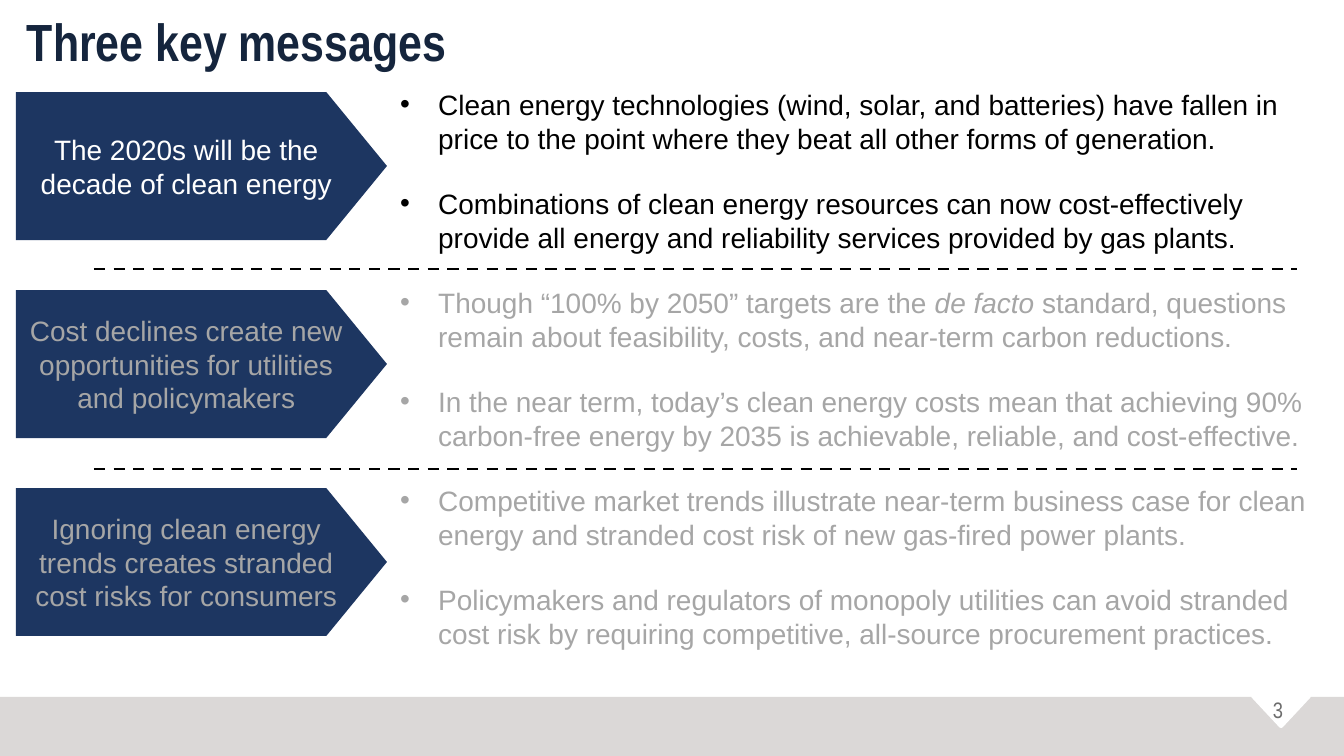
from lxml.etree import SubElement
from pptx import Presentation
from pptx.dml.color import RGBColor
from pptx.enum.dml import MSO_LINE
from pptx.enum.shapes import MSO_CONNECTOR, MSO_SHAPE
from pptx.enum.text import MSO_ANCHOR, PP_ALIGN
from pptx.oxml.ns import qn
from pptx.util import Pt

TITLE = "Three key messages"
PAGE_NUMBER = "3"
MESSAGES = [
    ("The 2020s will be the decade of clean energy", [
        ["Clean energy technologies (wind, solar, and batteries) have fallen in "
         "price to the point where they beat all other forms of generation."],
        ["Combinations of clean energy resources can now cost-effectively "
         "provide all energy and reliability services provided by gas plants."],
    ]),
    ("Cost declines create new opportunities for utilities and policymakers", [
        ["Though “100% by 2050” targets are the ", "de facto",
         " standard, questions remain about feasibility, costs, "
         "and near-term carbon reductions."],
        ["In the near term, today’s clean energy costs mean that achieving 90% "
         "carbon-free energy by 2035 is achievable, reliable, and cost-effective."],
    ]),
    ("Ignoring clean energy trends creates stranded cost risks for consumers", [
        ["Competitive market trends illustrate near-term business case for clean "
         "energy and stranded cost risk of new gas-fired power plants."],
        ["Policymakers and regulators of monopoly utilities can avoid stranded "
         "cost risk by requiring competitive, all-source procurement practices."],
    ]),
]
ACTIVE_MESSAGE = 0
ITALIC_TERMS = {"de facto"}

NAVY = RGBColor(0x1D, 0x36, 0x61)
TITLE_NAVY = RGBColor(0x15, 0x25, 0x3D)
BLACK = RGBColor(0, 0, 0)
WHITE = RGBColor(0xFF, 0xFF, 0xFF)
MUTED = RGBColor(0xA6, 0xA6, 0xA6)
FOOTER_GRAY = RGBColor(0xDB, 0xD8, 0xD7)
NUMBER_GRAY = RGBColor(0x6C, 0x6C, 0x6C)

ARROW_TOP, ROW_PITCH = 92, 198
DETAIL_OFFSET = -11
DIVIDER_TOPS = [269, 469]
DIVIDER_LEFT, DIVIDER_RIGHT = 94, 1297


def px(value):
    return round(value * 914400 / 134.4)


def add_filled_shape(slide, kind, box, color):
    shape = slide.shapes.add_shape(kind, *map(px, box))
    shape.shadow.inherit = False
    shape.fill.solid()
    shape.fill.fore_color.rgb = color
    shape.line.fill.background()
    return shape


def add_text_frame(slide, box, anchor=MSO_ANCHOR.TOP):
    frame = slide.shapes.add_textbox(*map(px, box)).text_frame
    frame.word_wrap = True
    frame.vertical_anchor = anchor
    return frame


def write_paragraph(frame, *texts, color, size=15, font="Arial", bold=False,
                    align=PP_ALIGN.LEFT, bullet=False, first=True, spacing=None):
    paragraph = frame.paragraphs[0] if first else frame.add_paragraph()
    paragraph.alignment = align
    if spacing:
        paragraph.line_spacing = spacing
    if not first:
        paragraph.space_before = Pt(17)
    if bullet:
        properties = paragraph._p.get_or_add_pPr()
        properties.set("marL", str(px(38)))
        properties.set("indent", str(px(-38)))
        SubElement(properties, qn("a:buFont"), typeface="Arial")
        SubElement(properties, qn("a:buChar"), char="•")
    for text in texts:
        run = paragraph.add_run()
        run.text = text
        run.font.name = font
        run.font.size = Pt(size)
        run.font.bold = bold
        run.font.italic = text in ITALIC_TERMS
        run.font.color.rgb = color


def add_footer(slide):
    add_filled_shape(slide, MSO_SHAPE.RECTANGLE, (0, 697, 1344, 59), FOOTER_GRAY)
    notch = add_filled_shape(slide, MSO_SHAPE.ISOSCELES_TRIANGLE, (1253, 696, 56, 30), WHITE)
    notch.rotation = 180
    notch.line.color.rgb = WHITE
    notch.line.width = Pt(2.25)
    frame = add_text_frame(slide, (1252, 690, 52, 40))
    write_paragraph(frame, PAGE_NUMBER, color=NUMBER_GRAY, size=12,
                    font="Arial Narrow", align=PP_ALIGN.CENTER)


def add_title(slide):
    frame = add_text_frame(slide, (0, -1, 1344, 97), MSO_ANCHOR.MIDDLE)
    frame.margin_left = frame.margin_right = px(27)
    frame.margin_top, frame.margin_bottom = px(7), px(13)
    write_paragraph(frame, TITLE, color=TITLE_NAVY, size=28,
                    font="Arial Narrow", bold=True, spacing=0.9)


def add_message(slide, index, headline, details):
    active = index == ACTIVE_MESSAGE
    top = ARROW_TOP + index * ROW_PITCH
    arrow = add_filled_shape(slide, MSO_SHAPE.PENTAGON, (16, top, 371, 148), NAVY)
    arrow.adjustments[0] = 0.41
    arrow.text_frame.word_wrap = True
    arrow.text_frame.vertical_anchor = MSO_ANCHOR.MIDDLE
    write_paragraph(arrow.text_frame, headline, color=WHITE if active else MUTED,
                    align=PP_ALIGN.CENTER)
    frame = add_text_frame(slide, (387, top + DETAIL_OFFSET, 957, 183))
    for position, texts in enumerate(details):
        write_paragraph(frame, *texts, color=BLACK if active else MUTED,
                        bullet=True, first=position == 0)


def add_divider(slide, top):
    divider = slide.shapes.add_connector(
        MSO_CONNECTOR.STRAIGHT, px(DIVIDER_LEFT), px(top), px(DIVIDER_RIGHT), px(top))
    divider.line.color.rgb = BLACK
    divider.line.width = Pt(1.5)
    divider.line.dash_style = MSO_LINE.DASH
    SubElement(divider._element.spPr, qn("a:effectLst"))


def main():
    presentation = Presentation()
    presentation.slide_width, presentation.slide_height = px(1344), px(756)
    slide = presentation.slides.add_slide(presentation.slide_layouts[6])
    add_footer(slide)
    add_title(slide)
    for index, (headline, details) in enumerate(MESSAGES):
        add_message(slide, index, headline, details)
    for top in DIVIDER_TOPS:
        add_divider(slide, top)
    presentation.save("out.pptx")


if __name__ == "__main__":
    main()
